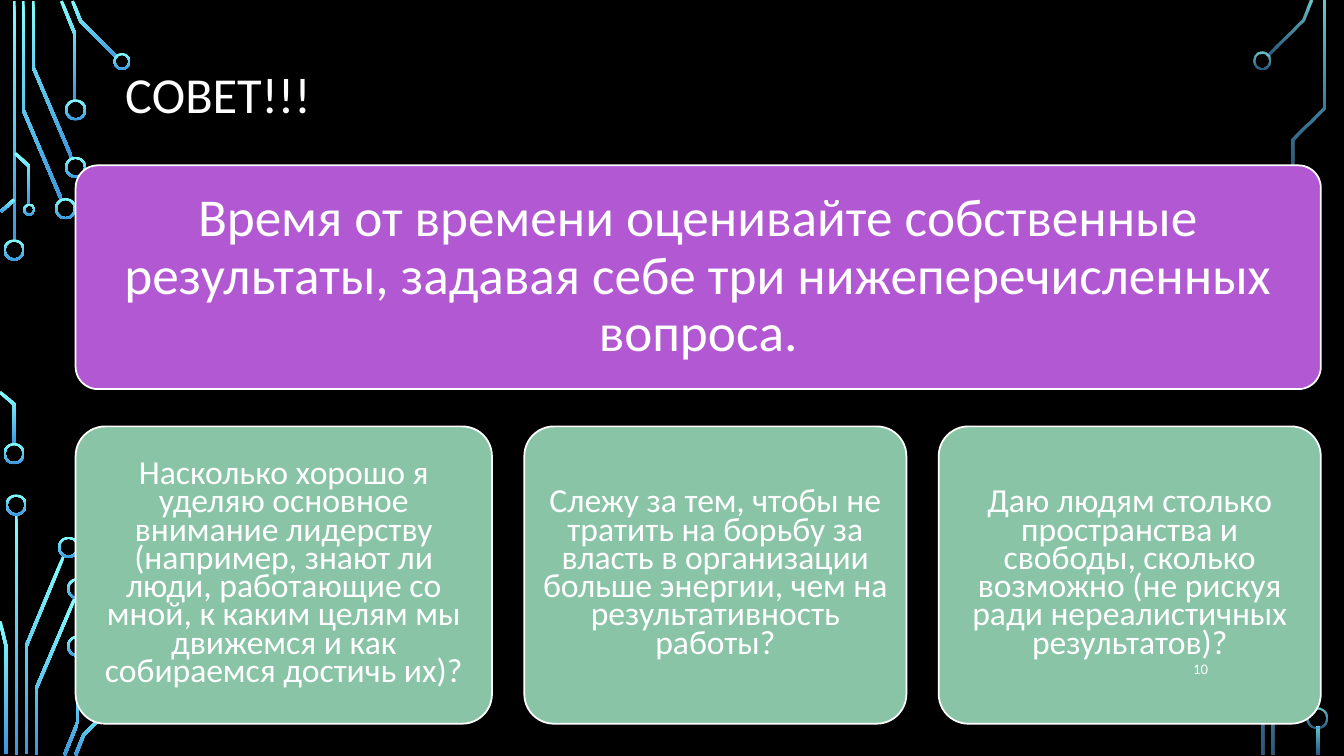
import math

import pptx
import pptx.dml.color
import pptx.enum.dml
import pptx.enum.shapes
import pptx.enum.text
import pptx.util
from lxml import etree

Inches = pptx.util.Inches
Pt = pptx.util.Pt
SHAPES = pptx.enum.shapes.MSO_SHAPE
ALIGN = pptx.enum.text.PP_ALIGN

COLORS = {
    "background": "000000",
    "text": "FFFFFF",
    "advice": "B258D3",
    "question": "8AC4A7",
    "glow": "82FFFF",
    "deep": "3D97DE",
}
FONT = "Calibri"

TITLE = "СОВЕТ!!!"
ADVICE = ("Время от времени оценивайте собственные результаты, "
          "задавая себе три нижеперечисленных вопроса.")
QUESTIONS = [
    (4.13, "Насколько хорошо я уделяю основное внимание лидерству (например, знают ли "
           "люди, работающие со мной, к каким целям мы движемся и как собираемся достичь их)?"),
    (3.79, "Слежу за тем, чтобы не тратить на борьбу за власть в организации больше "
           "энергии, чем на результативность работы?"),
    (3.79, "Даю людям столько пространства и свободы, сколько возможно (не рискуя ради "
           "нереалистичных результатов)?"),
]
PAGE = "10"

TRACE_WIDTH = 0.03
RING_WALL = 0.02
LEFT_TRACES = [
    [(0.14, 0.01), (0.14, 2.4)],
    [(0.23, 0.01), (0.23, 1.09), (0.61, 1.98)],
    [(0.33, 0.01), (0.33, 0.67), (0.71, 1.56)],
    [(0.61, 0.01), (0.74, 0.33), (0.74, 1)],
    [(0.72, 0.01), (0.8, 0.21), (1.16, 0.57)],
    [(0.14, 1.98), (0.01, 2.1)],
    [(0, 3.89), (0.14, 4.01), (0.14, 4.41)],
    [(0.15, 1.52), (0.29, 1.65), (0.29, 2.03)],
    [(0.16, 5.1), (0.16, 7.49)],
    [(0.63, 5.52), (0.26, 6.41), (0.26, 7.48)],
    [(0, 6.16), (0.06, 6.41), (0.06, 7.48)],
    [(0.74, 5.94), (0.36, 6.83), (0.36, 7.49)],
    [(0.77, 6.5), (0.77, 7.17), (0.64, 7.49)],
    [(1.18, 6.93), (0.83, 7.29), (0.75, 7.49)],
]
LEFT_RINGS = [
    (0.14, 2.48, 0.21), (0.14, 4.5, 0.21), (0.65, 2.07, 0.21), (0.75, 1.66, 0.21),
    (0.75, 1.09, 0.21), (1.21, 0.61, 0.17), (0.29, 2.08, 0.12), (0.16, 5.01, 0.21),
    (0.68, 5.43, 0.21), (0.77, 5.84, 0.21), (0.77, 6.41, 0.21),
]
RIGHT_TRACES = [
    [(13, 0), (12.92, 0.2), (12.57, 0.55)],
    [(12.93, 6.23), (12.63, 6.93), (12.63, 7.49)],
    [(13.13, 0.01), (13.13, 1.07), (12.82, 1.38), (12.82, 1.69)],
    [(12.84, 5.52), (12.84, 5.83), (12.53, 6.14), (12.53, 7.49)],
    [(13.07, 7.21), (13.07, 7.49)],
]
RIGHT_RINGS = [(12.52, 0.6, 0.17), (13.06, 7.12, 0.21)]
CIRCUITS = [
    (LEFT_TRACES, LEFT_RINGS, (100, 100)),
    (RIGHT_TRACES, RIGHT_RINGS, (80, 60)),
]


def rgb(name):
    return pptx.dml.color.RGBColor.from_string(COLORS[name])


def write(holder, text, size, align=ALIGN.CENTER, spacing=1.0, inset=None):
    frame = holder.text_frame
    frame.word_wrap = True
    frame.auto_size = pptx.enum.text.MSO_AUTO_SIZE.NONE
    frame.vertical_anchor = pptx.enum.text.MSO_ANCHOR.MIDDLE
    if inset is not None:
        frame.margin_left = frame.margin_right = Inches(inset)
        frame.margin_top = frame.margin_bottom = Inches(inset)
    frame.text = text
    paragraph = frame.paragraphs[0]
    paragraph.alignment = align
    paragraph.line_spacing = spacing
    font = paragraph.runs[0].font
    font.name = FONT
    font.size = Pt(size)
    font.color.rgb = rgb("text")


def glow(part, opacities):
    part.shadow.inherit = False
    part.line.fill.background()
    part.fill.gradient()
    part.fill.gradient_angle = 270
    for stop, name, position, opacity in zip(
            part.fill.gradient_stops, ("glow", "deep"), (0, 1), opacities):
        stop.position = position
        stop.color.rgb = rgb(name)
        if opacity < 100:
            color = part.fill._fill._gradFill.gsLst[position][0]
            namespace = etree.QName(color).namespace
            etree.SubElement(color, f"{{{namespace}}}alpha", val=str(opacity * 1000))


def trace_outline(points):
    angles = [math.atan2(y2 - y1, x2 - x1)
              for (x1, y1), (x2, y2) in zip(points, points[1:])]
    near, far = [], []
    for (x, y), before, after in zip(points, angles[:1] + angles, angles + angles[-1:]):
        middle = (before + after) / 2
        reach = TRACE_WIDTH / 2 / math.cos((after - before) / 2)
        dx, dy = -math.sin(middle) * reach, math.cos(middle) * reach
        near.append((Inches(x + dx), Inches(y + dy)))
        far.append((Inches(x - dx), Inches(y - dy)))
    return near + far[::-1]


def draw_circuit(slide, traces, rings, opacities):
    for points in traces:
        outline = trace_outline(points)
        builder = slide.shapes.build_freeform(*outline[0])
        builder.add_line_segments(outline[1:], close=True)
        glow(builder.convert_to_shape(), opacities)
    for x, y, size in rings:
        ring = slide.shapes.add_shape(
            SHAPES.DONUT, Inches(x - size / 2), Inches(y - size / 2),
            Inches(size), Inches(size))
        ring.adjustments[0] = RING_WALL / size
        glow(ring, opacities)


def add_card(slide, left, top, width, height, color, text, **style):
    card = slide.shapes.add_shape(
        SHAPES.ROUNDED_RECTANGLE, Inches(left), Inches(top), Inches(width), Inches(height))
    card.adjustments[0] = 0.1
    card.shadow.inherit = False
    card.fill.solid()
    card.fill.fore_color.rgb = rgb(color)
    card.line.color.rgb = rgb("text")
    card.line.width = Pt(1.25)
    write(card, text, **style)


def main():
    deck = pptx.Presentation()
    deck.slide_width, deck.slide_height = Inches(13.33), Inches(7.5)
    slide = deck.slides.add_slide(deck.slide_layouts[5])
    slide.background.fill.solid()
    slide.background.fill.fore_color.rgb = rgb("background")

    for traces, rings, opacities in CIRCUITS:
        draw_circuit(slide, traces, rings, opacities)

    title = slide.shapes.title
    title.left, title.top = Inches(1.14), Inches(0.15)
    title.width, title.height = Inches(10.83), Inches(1.62)
    write(title, TITLE, size=36, align=ALIGN.LEFT, spacing=0.9)

    left, gap = 0.75, 0.32
    total = sum(width for width, _ in QUESTIONS) + gap * (len(QUESTIONS) - 1)
    add_card(slide, left, 1.64, total, 2.22, "advice", ADVICE,
             size=38, spacing=0.9, inset=0.16)
    for width, question in QUESTIONS:
        add_card(slide, left, 4.23, width, 2.95, "question", question,
                 size=24, spacing=0.7, inset=0.1)
        left += width + gap

    page = slide.shapes.add_textbox(Inches(11.24), Inches(6.43), Inches(0.84), Inches(0.4))
    write(page, PAGE, size=10.5, align=ALIGN.RIGHT)
    deck.save("out.pptx")


if __name__ == "__main__":
    main()
